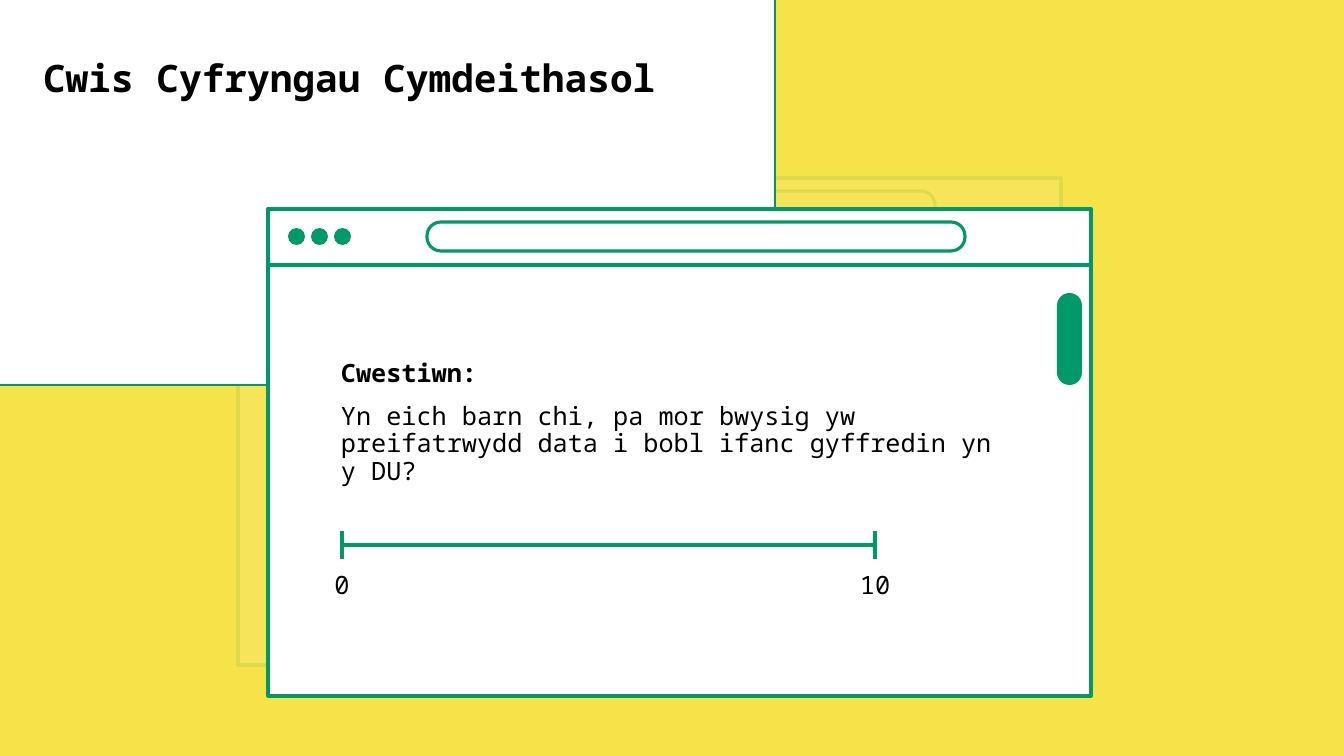
from lxml import etree
from pptx import Presentation
from pptx.dml.color import RGBColor
from pptx.enum.shapes import MSO_CONNECTOR, MSO_SHAPE
from pptx.enum.text import MSO_ANCHOR, PP_ALIGN
from pptx.oxml.ns import qn
from pptx.util import Emu, Pt

RECT, ROUND, OVAL = MSO_SHAPE.RECTANGLE, MSO_SHAPE.ROUNDED_RECTANGLE, MSO_SHAPE.OVAL
STRAIGHT = MSO_CONNECTOR.STRAIGHT
LEFT, CENTER, TOP = PP_ALIGN.LEFT, PP_ALIGN.CENTER, MSO_ANCHOR.TOP

# Content
TITLE = "Cwis Cyfryngau Cymdeithasol"
QUESTION = [
    ("Cwestiwn:", True),
    ("Yn eich barn chi, pa mor bwysig yw preifatrwydd data i bobl ifanc gyffredin yn y DU?", False),
]
SCALE_ENDS = [("0", 342), ("10", 875)]

# Look and layout, in px
COLORS = {"yellow": "F6E249", "green": "019967", "white": "FFFFFF", "black": "000000"}
FONT = "Noto Sans Mono"
EMU_PER_PX = 914400 / 75.6
SLIDE_W, SLIDE_H = 1344, 756
WINDOW_W, WINDOW_H, BAR_H = 823, 487, 56
REAR, FRONT = (238, 178), (268, 209)
DOT, DOT_STEP, DOT_COUNT = 17, 23, 3
SCALE_Y, TICK = 545, 14
LABEL_W, LABEL_H = 47, 38


def px(value):
    return Emu(round(value * EMU_PER_PX))


def color(name):
    return RGBColor.from_string(COLORS[name])


def add_shape(kind, left, top, width, height, fill=None, line=None, weight=3, corner=None):
    shape = page.shapes.add_shape(kind, px(left), px(top), px(width), px(height))
    shape.shadow.inherit = False
    if corner is not None:
        shape.adjustments[0] = corner
    if fill:
        shape.fill.solid()
        shape.fill.fore_color.rgb = color(fill)
    else:
        shape.fill.background()
    if line:
        shape.line.color.rgb = color(line)
        shape.line.width = Pt(weight)
    else:
        shape.line.fill.background()
    return shape


def add_line(x1, y1, x2, y2):
    line = page.shapes.add_connector(STRAIGHT, px(x1), px(y1), px(x2), px(y2))
    line.line.color.rgb = color("green")
    line.line.width = Pt(3)
    etree.SubElement(line._element.spPr, qn("a:effectLst"))


def add_text(paragraphs, left, top, width, height, size, align=LEFT, wrap=True,
             insets=(8, 4), spacing=1.0, after=0):
    box = page.shapes.add_textbox(px(left), px(top), px(width), px(height))
    side, edge = map(px, insets)
    frame_format = {"word_wrap": wrap, "vertical_anchor": TOP, "margin_left": side,
                    "margin_right": side, "margin_top": edge, "margin_bottom": edge}
    for name, value in frame_format.items():
        setattr(box.text_frame, name, value)
    for index, (text, bold) in enumerate(paragraphs):
        para = box.text_frame.add_paragraph() if index else box.text_frame.paragraphs[0]
        para_format = {"alignment": align, "line_spacing": spacing, "space_after": Pt(after)}
        for name, value in para_format.items():
            setattr(para, name, value)
        span = para.add_run()
        span.text = text
        for name, value in {"name": FONT, "size": Pt(size), "bold": bold}.items():
            setattr(span.font, name, value)
        span.font.color.rgb = color("black")


def add_window(left, top):
    for height in (WINDOW_H, BAR_H):
        add_shape(RECT, left, top, WINDOW_W, height, "white", "green")
    add_shape(ROUND, left + 159, top + 13, 538, 29, line="green", corner=0.48)


deck = Presentation()
deck.slide_width, deck.slide_height = px(SLIDE_W), px(SLIDE_H)
page = deck.slides.add_slide(deck.slide_layouts[6])
page.background.fill.solid()
page.background.fill.fore_color.rgb = color("yellow")

# Rear window, faded by a nearly opaque veil
add_window(*REAR)
veil = add_shape(RECT, 0, 0, SLIDE_W, SLIDE_H, "yellow")
veil_color = veil._element.spPr.find(qn("a:solidFill"))[0]
etree.SubElement(veil_color, qn("a:alpha"), val="90000")

# Title card, bleeding off the top left corner
add_shape(RECT, -48, -19, 823, 404, "white", "green", weight=2.75)
add_text([(TITLE, True)], 35, 51, 650, 44, 36)

# Front window with scroll bar and dots
add_window(*FRONT)
add_shape(ROUND, 1057, 293, 25, 92, "green", corner=0.5)
for index in range(DOT_COUNT):
    add_shape(OVAL, 288 + index * DOT_STEP, 228, DOT, DOT, "green")

# Question
add_text(QUESTION, 331, 356, 677, 124, 24, insets=(10, 5), spacing=0.9, after=15)

# Answer scale
add_line(SCALE_ENDS[0][1], SCALE_Y, SCALE_ENDS[-1][1], SCALE_Y)
for label, x in SCALE_ENDS:
    add_line(x, SCALE_Y + TICK, x, SCALE_Y - TICK)
    add_text([(label, False)], x - LABEL_W / 2, 565, LABEL_W, LABEL_H, 24, CENTER, wrap=False)

deck.save("out.pptx")
